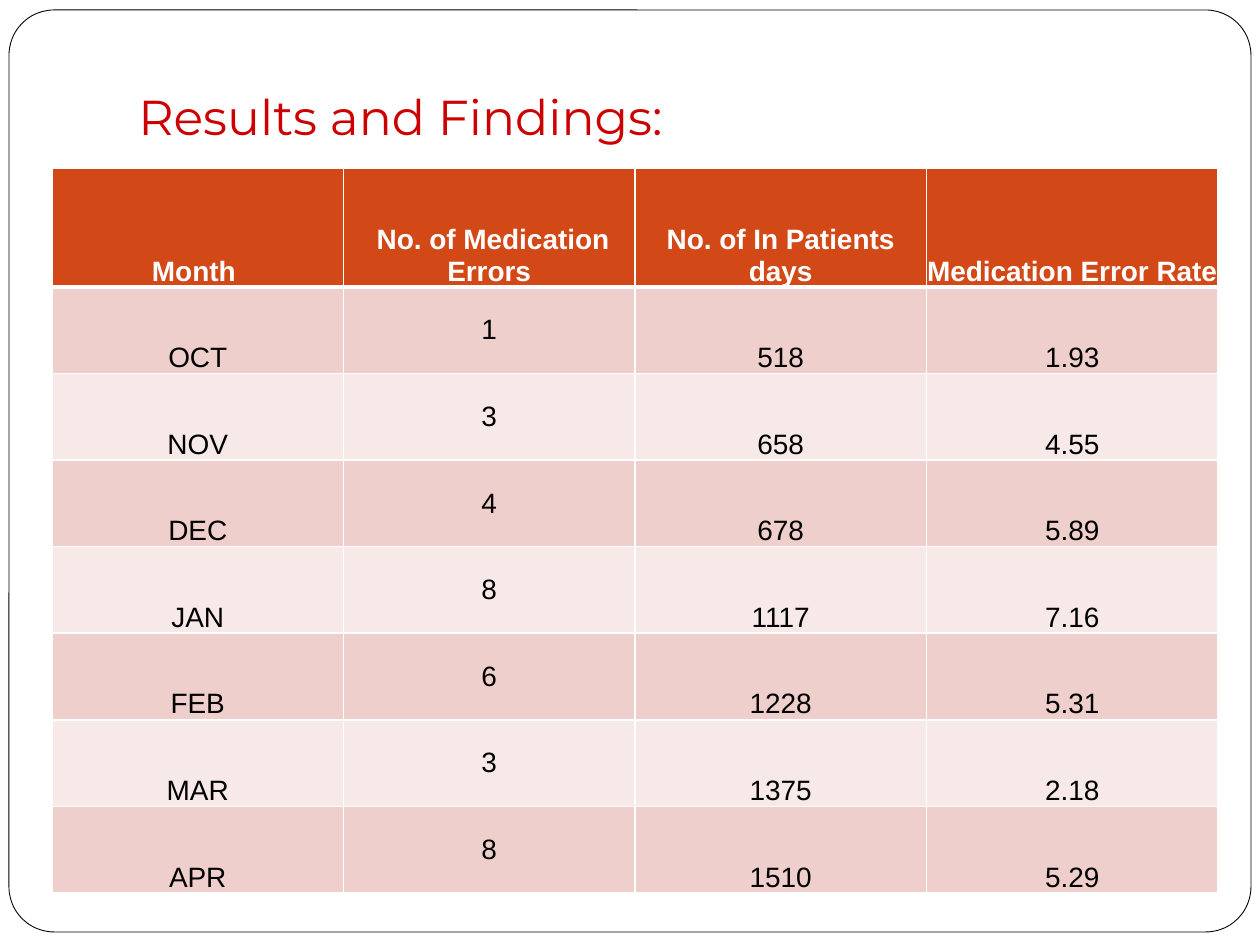
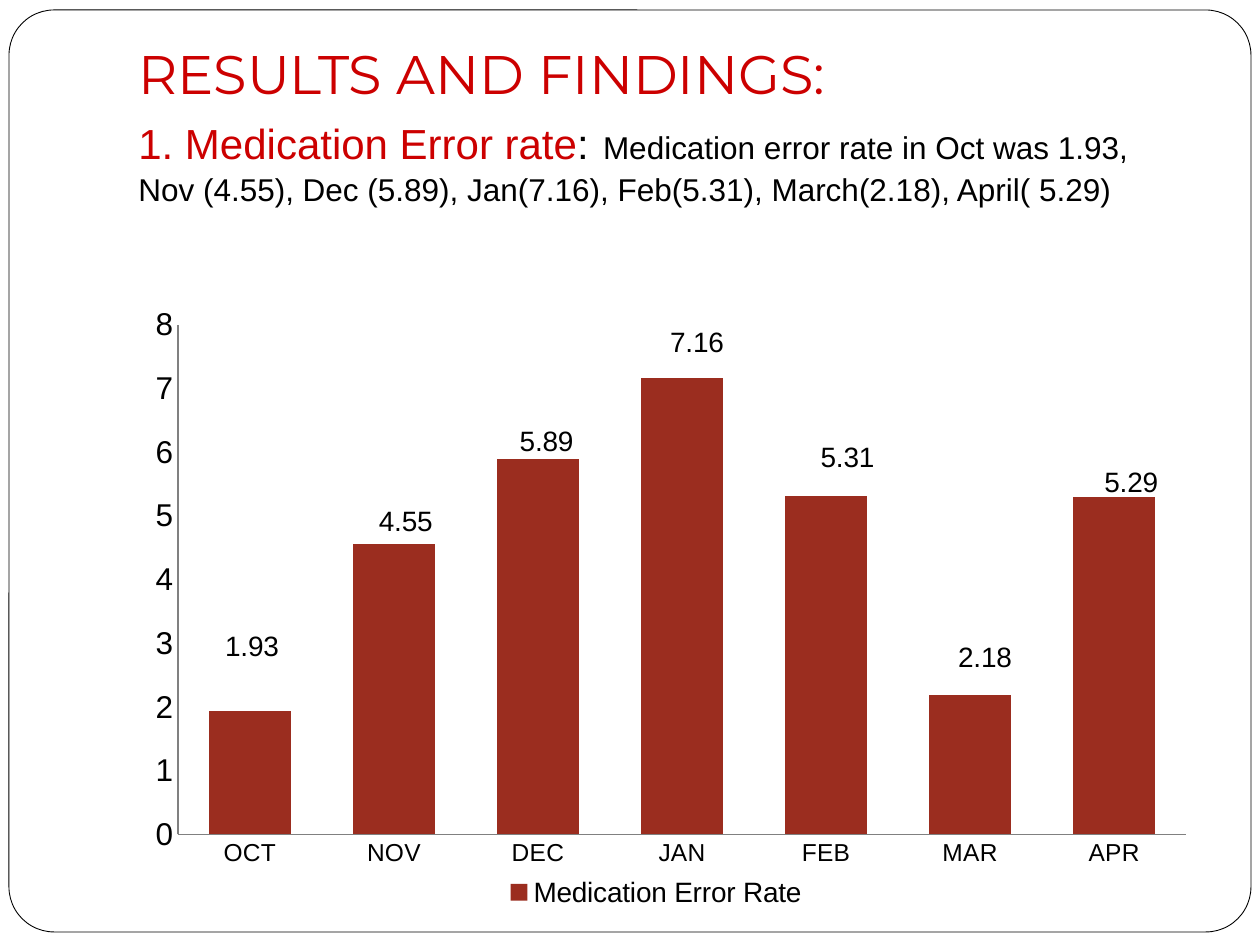
from typing import NamedTuple

from lxml.etree import SubElement
from pptx import Presentation
from pptx.chart.data import CategoryChartData
from pptx.dml.color import RGBColor
from pptx.enum.chart import XL_CHART_TYPE as ChartType, XL_LEGEND_POSITION as LegendPos, XL_TICK_MARK as Tick
from pptx.enum.shapes import MSO_SHAPE as Shape
from pptx.enum.text import MSO_ANCHOR as Anchor, PP_ALIGN as Align
from pptx.oxml import parse_xml
from pptx.oxml.ns import nsdecls, qn
from pptx.slide import Slide
from pptx.util import Emu, Pt

PX_PER_INCH = 126
WHITE = RGBColor(0xFF, 0xFF, 0xFF)
BLACK = RGBColor(0x00, 0x00, 0x00)
RED = RGBColor(0xCC, 0x00, 0x00)
ORANGE = RGBColor(0xD3, 0x48, 0x17)
BRICK = RGBColor(0x9B, 0x2D, 0x1F)
ROSE = RGBColor(0xEF, 0xCF, 0xCC)
PALE_ROSE = RGBColor(0xF7, 0xE9, 0xE8)
AXIS_GREY = RGBColor(0x80, 0x80, 0x80)
HEADING = "Montserrat"
BODY = "Arial"
RATE = "Medication Error Rate"
NO_LEADER_LINES = (
    f'<c:extLst {nsdecls("c")}><c:ext uri="{{CE6537A1-D6FC-4f65-9D91-7224C49458BB}}" '
    'xmlns:c15="http://schemas.microsoft.com/office/drawing/2012/chart">'
    '<c15:showLeaderLines val="0"/></c:ext></c:extLst>'
)


class Box(NamedTuple):
    x: int
    y: int
    w: int
    h: int


class Run(NamedTuple):
    text: str
    size: int
    font: str = BODY
    color: RGBColor = BLACK


class Month(NamedTuple):
    name: str
    errors: int
    days: int
    rate: float
    label_dx: int
    label_dy: int


MONTHS = [
    Month("OCT", 1, 518, 1.93, 2, -126),
    Month("NOV", 3, 658, 4.55, 12, -168),
    Month("DEC", 4, 678, 5.89, 9, -205),
    Month("JAN", 8, 1117, 7.16, 15, -263),
    Month("FEB", 6, 1228, 5.31, 21, -207),
    Month("MAR", 3, 1375, 2.18, 15, -107),
    Month("APR", 8, 1510, 5.29, 17, -183),
]
HEADERS = ["Month ", " No. of Medication Errors", "No. of In Patients days", RATE]
ERRORS_COL = 1

FRAME = Box(9, 10, 1242, 922)
TABLE = Box(52, 168, 1166, 725)
HEADER_H = 119
CHART = Box(126, 304, 1061, 609)


def px(n: int) -> Emu:
    return Emu(round(n * 914400 / PX_PER_INCH))


def place(box: Box) -> list[Emu]:
    return [px(n) for n in box]


def style_font(font, size: int, name: str = BODY, color: RGBColor = BLACK) -> None:
    font.size = Pt(size)
    font.name = name
    font.color.rgb = color


def add_frame(slide: Slide) -> None:
    sp = slide.shapes.add_shape(Shape.ROUNDED_RECTANGLE, *place(FRAME))
    sp.adjustments[0] = 0.049
    sp.shadow.inherit = False
    sp.fill.solid()
    sp.fill.fore_color.rgb = WHITE
    sp.line.color.rgb = BLACK
    sp.line.width = Pt(0.5)


def add_title(slide: Slide, box: Box, lines: list[list[Run]]) -> None:
    tf = slide.shapes.add_textbox(*place(box)).text_frame
    tf.word_wrap = True
    tf.vertical_anchor = Anchor.BOTTOM
    tf.margin_bottom = px(13)
    p = tf.paragraphs[0]
    for i, line in enumerate(lines):
        if i:
            p.add_line_break()
        for run in line:
            r = p.add_run()
            r.text = run.text
            style_font(r.font, run.size, run.font, run.color)


def set_borders(cell, row: int) -> None:
    tc_pr = cell._tc.get_or_add_tcPr()
    thick = {"lnB": 0, "lnT": 1}
    for side in ("lnL", "lnR", "lnT", "lnB"):
        width = Pt(3 if thick.get(side) == row else 1)
        ln = SubElement(tc_pr, qn(f"a:{side}"), w=str(width))
        SubElement(SubElement(ln, qn("a:solidFill")), qn("a:srgbClr"), val=str(WHITE))


def add_results_table(slide: Slide) -> None:
    rows = [HEADERS] + [[m.name, m.errors, m.days, m.rate] for m in MONTHS]
    table = slide.shapes.add_table(len(rows), len(HEADERS), *place(TABLE)).table
    for col in table.columns:
        col.width = Emu(px(TABLE.w) // len(HEADERS))
    for i, values in enumerate(rows):
        header = i == 0
        table.rows[i].height = px(HEADER_H) if header else Emu(px(TABLE.h - HEADER_H) // len(MONTHS))
        for j, value in enumerate(values):
            cell = table.cell(i, j)
            set_borders(cell, i)
            cell.fill.solid()
            cell.fill.fore_color.rgb = ORANGE if header else ROSE if i % 2 else PALE_ROSE
            cell.margin_left = cell.margin_right = cell.margin_top = cell.margin_bottom = 0
            cell.vertical_anchor = Anchor.MIDDLE if j == ERRORS_COL and not header else Anchor.BOTTOM
            cell.text = str(value)
            p = cell.text_frame.paragraphs[0]
            p.alignment = Align.CENTER
            p.font.bold = header
            style_font(p.font, 16, color=WHITE if header else BLACK)


def manual_layout(**settings: object):
    items = "".join(f'<c:{tag} val="{val}"/>' for tag, val in settings.items())
    return parse_xml(f'<c:layout {nsdecls("c")}><c:manualLayout>{items}</c:manualLayout></c:layout>')


def set_plot_layout(chart) -> None:
    area = chart._chartSpace.find(".//" + qn("c:plotArea"))
    for old in area.findall(qn("c:layout")):
        area.remove(old)
    area.insert(0, manual_layout(layoutTarget="inner", xMode="edge", yMode="edge",
                                 x=0.049, y=0.034, w=0.951, h=0.837))


def hide_leader_lines(d_lbls) -> None:
    for old in d_lbls.findall(qn("c:showLeaderLines")):
        d_lbls.remove(old)
    SubElement(d_lbls, qn("c:showLeaderLines"), val="0")
    d_lbls.append(parse_xml(NO_LEADER_LINES))


def add_value_labels(series) -> None:
    labels = series.data_labels
    labels.show_value = True
    style_font(labels.font, 16)
    for i in range(len(MONTHS)):
        style_font(series.points[i].data_label.font, 16)
    for label, m in zip(labels._element.findall(qn("c:dLbl")), MONTHS):
        label.insert(1, manual_layout(x=round(m.label_dx / CHART.w, 3),
                                      y=round(m.label_dy / CHART.h, 3)))
    hide_leader_lines(labels._element)


def add_rate_chart(slide: Slide) -> None:
    data = CategoryChartData()
    data.categories = [m.name for m in MONTHS]
    data.add_series(RATE, [m.rate for m in MONTHS])
    chart = slide.shapes.add_chart(ChartType.COLUMN_STACKED, *place(CHART), data).chart
    style_font(chart.font, 10, "Times New Roman")
    chart.has_title = False
    chart.has_legend = True
    chart.legend.position = LegendPos.BOTTOM
    chart.legend.include_in_layout = False
    style_font(chart.legend.font, 16)
    for axis, size in ((chart.category_axis, 14), (chart.value_axis, 18)):
        axis.has_major_gridlines = False
        axis.major_tick_mark = axis.minor_tick_mark = Tick.NONE
        axis.format.line.color.rgb = AXIS_GREY
        style_font(axis.tick_labels.font, size)
    chart.value_axis.minimum_scale = 0
    chart.value_axis.maximum_scale = 8
    chart.value_axis.major_unit = 1
    plot = chart.plots[0]
    plot.gap_width = 75
    plot.overlap = 100
    plot.vary_by_categories = False
    series = plot.series[0]
    series.format.fill.solid()
    series.format.fill.fore_color.rgb = BRICK
    add_value_labels(series)
    set_plot_layout(chart)


def add_slide(prs) -> Slide:
    slide = prs.slides.add_slide(prs.slide_layouts[6])
    add_frame(slide)
    return slide


def main() -> None:
    prs = Presentation()
    prs.slide_width, prs.slide_height = px(1260), px(945)

    slide = add_slide(prs)
    add_title(slide, Box(126, 38, 1071, 120), [[Run("Results and Findings:", 28, HEADING, RED)]])
    add_results_table(slide)

    slide = add_slide(prs)
    add_title(slide, Box(126, 21, 1071, 200), [
        [Run("RESULTS AND FINDINGS:", 31, HEADING, RED)],
        [
            Run("1. Medication Error rate", 24, color=RED),
            Run(":", 24),
            Run(" ", 31, HEADING),
            Run("Medication error rate in Oct was 1.93, Nov (4.55), Dec (5.89), "
                "Jan(7.16), Feb(5.31), March(2.18), April( 5.29)", 18),
        ],
    ])
    add_rate_chart(slide)

    prs.save("out.pptx")


if __name__ == "__main__":
    main()
